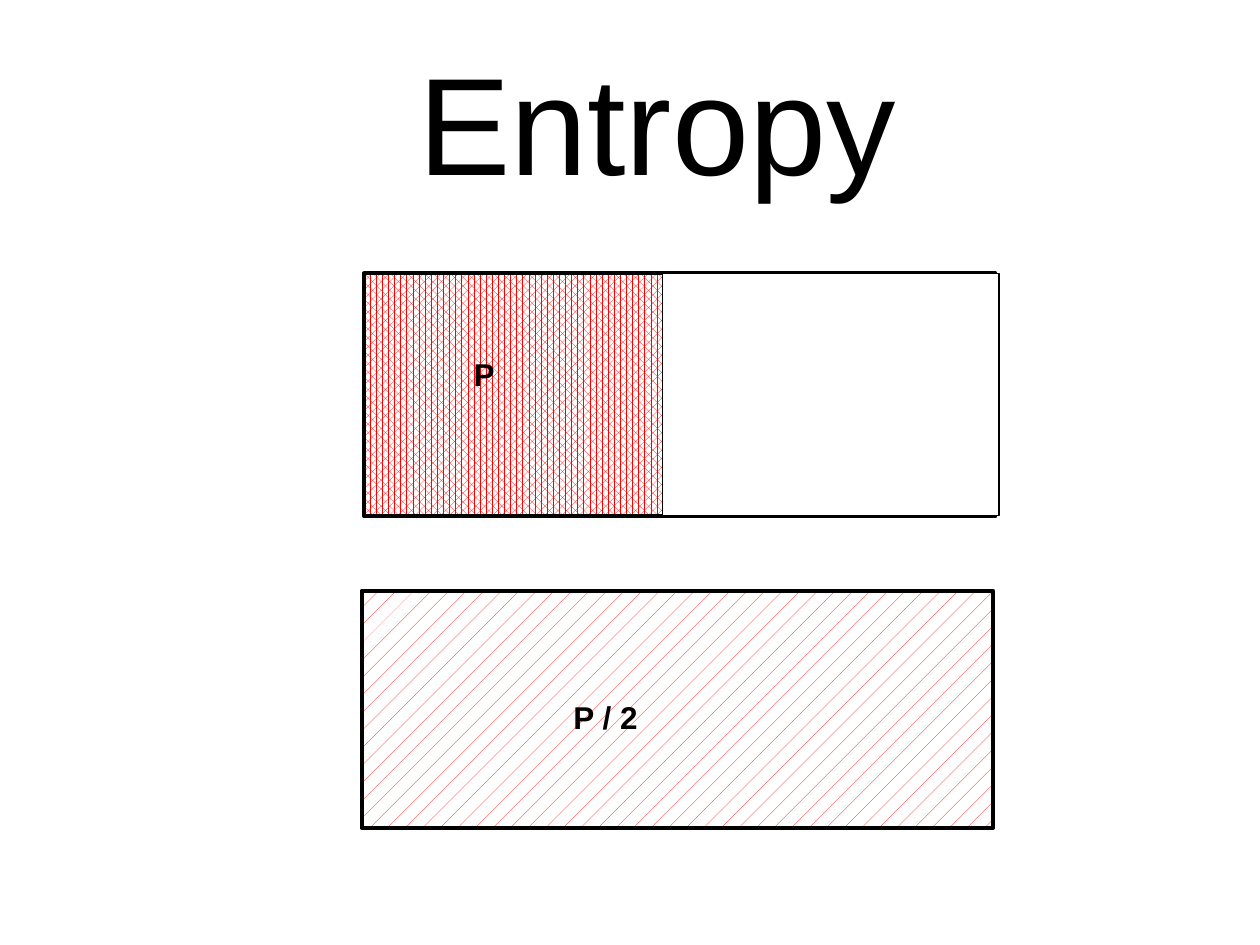
from pptx import Presentation
from pptx.dml.color import RGBColor
from pptx.enum import dml, shapes, text
from pptx.util import Cm, Pt

FONT = "Arial"
HUE = {"ink": "000000", "red": "FF0000", "paper": "FFFFFF"}
DENSE = dml.MSO_PATTERN.PERCENT_70
SPARSE = dml.MSO_PATTERN.PERCENT_5

# Boxes are left, top, width, height in cm.
TITLE = ("Entropy", (7.9, 0.84, 10.69, 3.18), 79.2)

# Back to front: kind, box, then fill and line width, or the label.
PARTS = [
    ("rect", (7.29, 11.91, 12.73, 4.78), SPARSE, 2.25),
    ("rect", (7.34, 5.51, 6.05, 4.88), DENSE, None),
    ("label", (9.55, 7.16, 0.43, 0.76), "P"),
    ("rect", (7.34, 5.51, 12.73, 4.9), None, 2.25),
    ("label", (11.56, 14.07, 1.3, 0.76), "P / 2"),
    ("rect", (13.36, 5.51, 6.78, 4.88), "paper", 0.75),
]


def rgb(name):
    return RGBColor.from_string(HUE[name])


def write(frame, words, size, bold=False):
    frame.text = words
    font = frame.paragraphs[0].runs[0].font
    font.name, font.size, font.bold = FONT, Pt(size), bold
    font.color.rgb = rgb("ink")


def add_rect(slide, box, paint, width):
    """Paint is a colour name, a pattern in red on paper, or None."""
    rect = slide.shapes.add_shape(shapes.MSO_SHAPE.RECTANGLE, *map(Cm, box))
    rect.shadow.inherit = False
    fill = rect.fill
    if paint is None:
        fill.background()
    elif paint in HUE:
        fill.solid()
        fill.fore_color.rgb = rgb(paint)
    else:
        fill.patterned()
        fill.pattern = paint
        fill.fore_color.rgb = rgb("red")
        fill.back_color.rgb = rgb("paper")
    if width is None:
        rect.line.fill.background()
    else:
        rect.line.color.rgb = rgb("ink")
        rect.line.width = Pt(width)


def add_label(slide, box, words):
    frame = slide.shapes.add_textbox(*map(Cm, box)).text_frame
    frame.margin_left = frame.margin_right = 0
    frame.margin_top = frame.margin_bottom = 0
    frame.word_wrap = False
    frame.auto_size = text.MSO_AUTO_SIZE.SHAPE_TO_FIT_TEXT
    write(frame, words, 18, bold=True)


def set_title(slide, words, box, size):
    title = slide.shapes.title
    title.left, title.top, title.width, title.height = map(Cm, box)
    frame = title.text_frame
    frame.auto_size = text.MSO_AUTO_SIZE.NONE
    frame.vertical_anchor = text.MSO_ANCHOR.MIDDLE
    write(frame, words, size)
    frame.paragraphs[0].alignment = text.PP_ALIGN.CENTER


def main():
    deck = Presentation()
    deck.slide_width, deck.slide_height = Cm(25.4), Cm(19.05)
    slide = deck.slides.add_slide(deck.slide_layouts[5])
    set_title(slide, *TITLE)
    draw = {"rect": add_rect, "label": add_label}
    for kind, *rest in PARTS:
        draw[kind](slide, *rest)
    deck.save("out.pptx")


if __name__ == "__main__":
    main()
